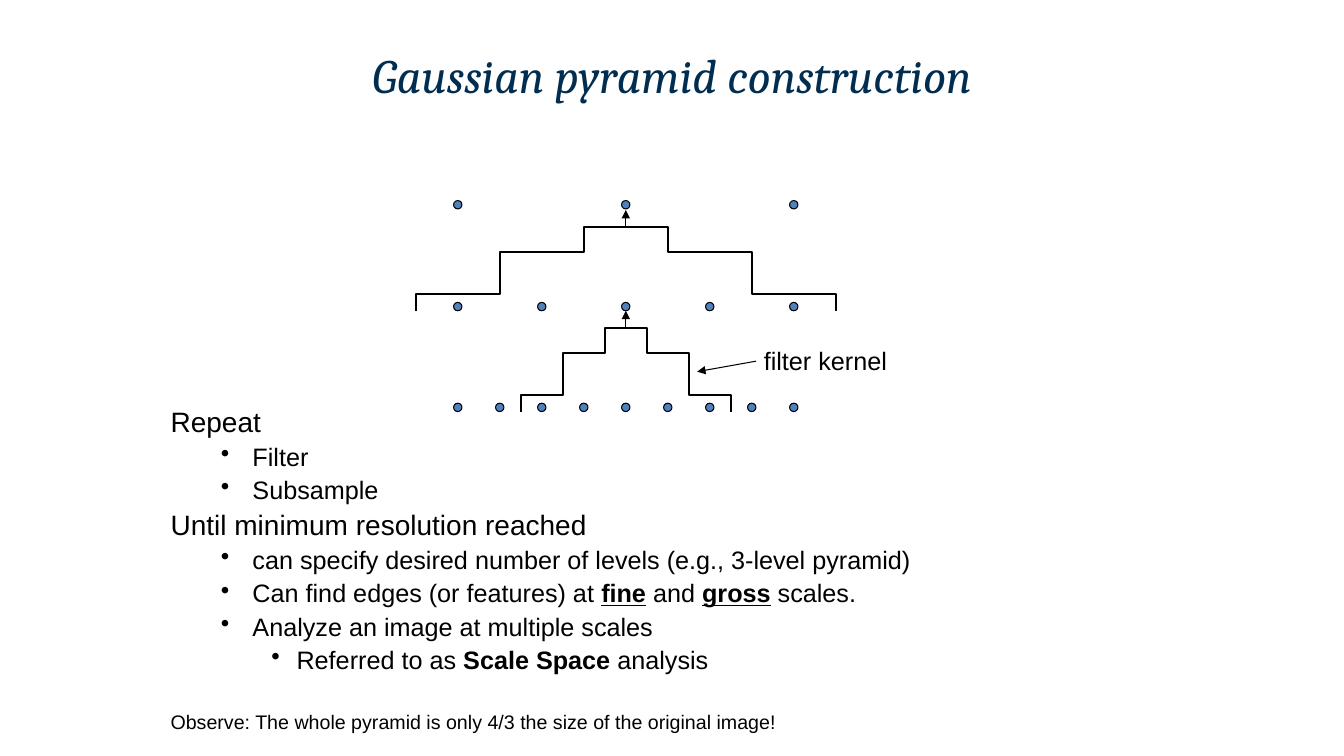
import pptx
import pptx.dml.color
import pptx.enum.shapes
import pptx.enum.text
import pptx.oxml
import pptx.oxml.ns
import pptx.util

PX = 9525  # EMU per px, 96 px to the inch
NAVY = pptx.dml.color.RGBColor(0x00, 0x2D, 0x50)
BLACK = pptx.dml.color.RGBColor(0x00, 0x00, 0x00)
BLUE = pptx.dml.color.RGBColor(0x4F, 0x81, 0xBD)

CENTER_X = 596
DOT = 8
# level: dot top, dot spacing, dot count
LEVELS = [(191, 160, 3), (288, 80, 5), (384, 40, 9)]
# kernel: top, width of one step
KERNELS = [(216, 80), (312, 40)]
# arrow: from x, from y, to x, to y
ARROWS = [(CENTER_X, 216, CENTER_X, 200), (CENTER_X, 312, CENTER_X, 296),
          (720, 344, 664, 354)]
# indent by outline level: left margin, first line
INDENTS = [(36, -36), (78, -30), (120, -24)]
# paragraph: outline level, size, space before, runs of (text, bold, underlined)
BODY = [
    (0, 20, 0, [("Repeat", False, False)]),
    (1, 18, 4.3, [("Filter", False, False)]),
    (1, 18, 4.3, [("Subsample", False, False)]),
    (0, 20, 4.8, [("Until minimum resolution reached", False, False)]),
    (1, 18, 4.3, [("can specify desired number of levels (e.g., 3-level pyramid)", False, False)]),
    (1, 18, 4.3, [("Can find edges (or features) at ", False, False), ("fine", True, True),
                  (" and ", False, False), ("gross", True, True), (" scales.", False, False)]),
    (1, 18, 4.3, [("Analyze an image at multiple scales", False, False)]),
    (2, 18, 4.3, [("Referred to as ", False, False), ("Scale Space ", True, False),
                  ("analysis", False, False)]),
    (0, 14, 27, [("Observe: The whole pyramid is only 4/3 the size of the original image!", False, False)]),
]


def add_text_box(left, top, width, height, wrap=True):
    box = slide.shapes.add_textbox(left * PX, top * PX, width * PX, height * PX)
    box.text_frame.word_wrap = wrap
    return box.text_frame


def add_run(paragraph, text, size, font="Arial", color=BLACK):
    run = paragraph.add_run()
    run.text = text
    run.font.name = font
    run.font.size = pptx.util.Pt(size)
    run.font.color.rgb = color
    return run


presentation = pptx.Presentation()
presentation.slide_width = 1280 * PX
presentation.slide_height = 720 * PX
slide = presentation.slides.add_slide(presentation.slide_layouts[6])

title = add_text_box(64, 36, 1152, 69)
title.vertical_anchor = pptx.enum.text.MSO_ANCHOR.MIDDLE
title.paragraphs[0].alignment = pptx.enum.text.PP_ALIGN.CENTER
add_run(title.paragraphs[0], "Gaussian pyramid construction", 34.2, "Cambria", NAVY).font.italic = True

# Samples of each pyramid level
for top, spacing, count in LEVELS:
    first_left = CENTER_X - DOT // 2 - spacing * (count // 2)
    for index in range(count):
        dot = slide.shapes.add_shape(
            pptx.enum.shapes.MSO_SHAPE.OVAL,
            (first_left + index * spacing) * PX, top * PX, DOT * PX, DOT * PX)
        dot.shadow.inherit = False
        dot.fill.solid()
        dot.fill.fore_color.rgb = BLUE
        dot.line.color.rgb = BLACK
        dot.line.width = pptx.util.Pt(0.75)

# Stepped filter kernels, mirrored about the centre
for top, step in KERNELS:
    left_half = [(-2.5, 80), (-2.5, 64), (-1.5, 64), (-1.5, 24), (-0.5, 24), (-0.5, 0)]
    right_half = [(-x, y) for x, y in reversed(left_half)]
    points = [(CENTER_X + x * step, top + y) for x, y in left_half + right_half]
    builder = slide.shapes.build_freeform(*points[0], scale=PX)
    builder.add_line_segments(points[1:], close=False)
    kernel = builder.convert_to_shape()
    kernel.shadow.inherit = False
    kernel.fill.background()
    kernel.line.color.rgb = BLACK
    kernel.line.width = pptx.util.Pt(1.5)

for from_x, from_y, to_x, to_y in ARROWS:
    arrow = slide.shapes.add_connector(
        pptx.enum.shapes.MSO_CONNECTOR.STRAIGHT,
        from_x * PX, from_y * PX, to_x * PX, to_y * PX)
    arrow.line.color.rgb = BLACK
    arrow.line.width = pptx.util.Pt(0.75)
    line = arrow.line._get_or_add_ln()
    line.append(pptx.oxml.parse_xml(
        f'<a:tailEnd {pptx.oxml.ns.nsdecls("a")} type="triangle"/>'))
    arrow._element.spPr.append(pptx.oxml.parse_xml(
        f'<a:effectLst {pptx.oxml.ns.nsdecls("a")}/>'))

label = add_text_box(718, 324, 138, 38, wrap=False)
add_run(label.paragraphs[0], "filter kernel", 18)

body = add_text_box(153, 384, 928, 324)
for index, (level, size, space_before, runs) in enumerate(BODY):
    paragraph = body.add_paragraph() if index else body.paragraphs[0]
    paragraph.level = level
    properties = paragraph._p.get_or_add_pPr()
    margin, first_line = INDENTS[level]
    properties.set("marL", str(margin * PX))
    properties.set("indent", str(first_line * PX))
    bullet = 'buChar char="•"' if level else "buNone"
    tag, _, attribute = bullet.partition(" ")
    properties.append(pptx.oxml.parse_xml(
        f'<a:{tag} {pptx.oxml.ns.nsdecls("a")} {attribute}/>'))
    paragraph.line_spacing = 0.9
    paragraph.space_before = pptx.util.Pt(space_before)
    for text, bold, underlined in runs:
        run = add_run(paragraph, text, size)
        run.font.bold = bold
        run.font.underline = underlined

presentation.save("out.pptx")
